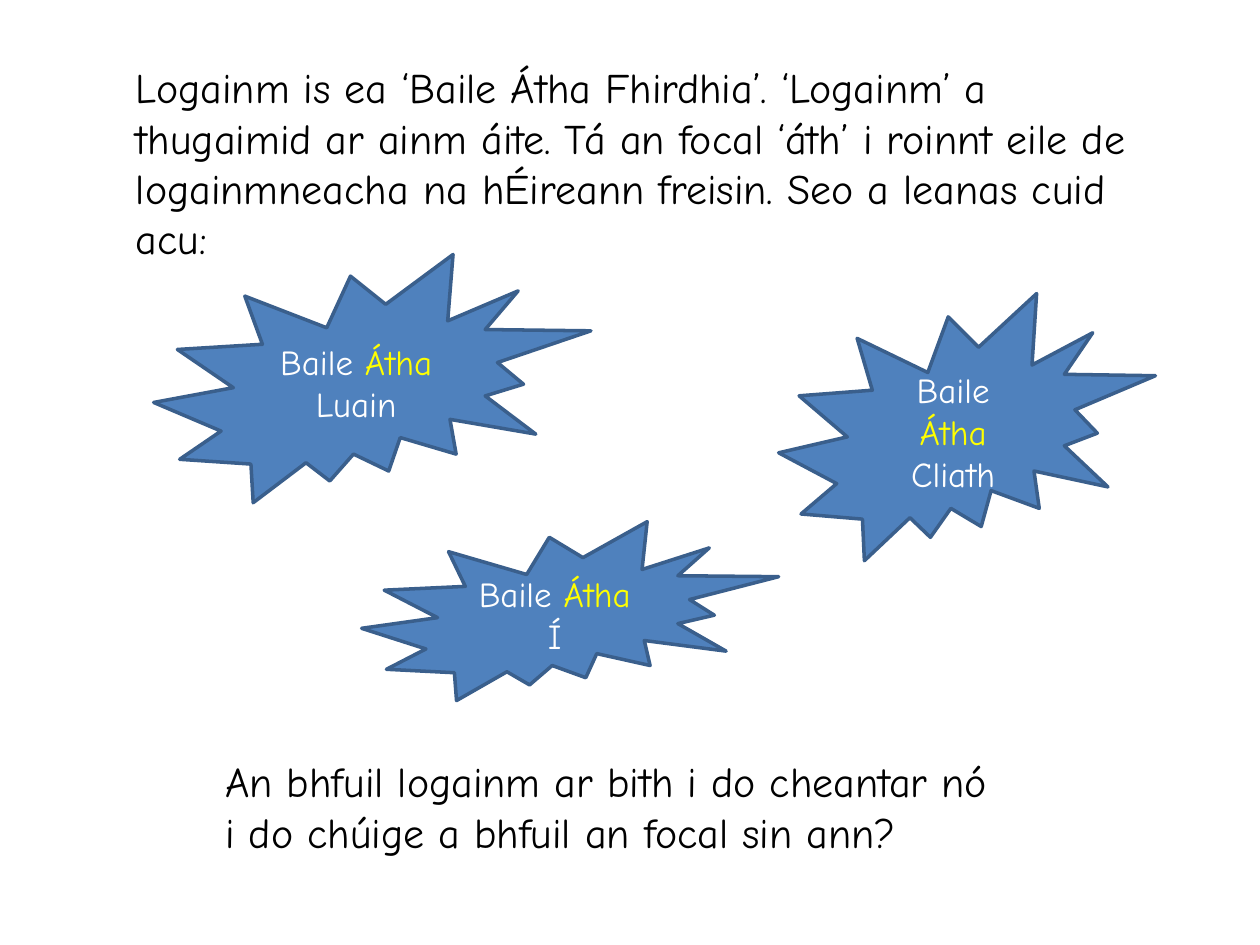
from pptx import Presentation, util as u
from pptx.dml.color import RGBColor
from pptx.enum import shapes, text

FONT = "Comic Neue"
BLACK = RGBColor(0x00, 0x00, 0x00)
WHITE = RGBColor(0xFF, 0xFF, 0xFF)
YELLOW = RGBColor(0xFF, 0xFF, 0x00)
BLUE = RGBColor(0x4F, 0x81, 0xBD)
DARK_BLUE = RGBColor(0x3A, 0x5F, 0x8C)

# Content: text and (left, top, width, height) in inches
PASSAGES = [
    ("Logainm is ea ‘Baile Átha Fhirdhia’. ‘Logainm’ a thugaimid ar ainm áite. "
     "Tá an focal ‘áth’ i roinnt eile de logainmneacha na hÉireann freisin. "
     "Seo a leanas cuid acu:", (0.98, 0.44, 8.27, 1.72)),
    ("An bhfuil logainm ar bith i do cheantar nó \v"
     "i do chúige a bhfuil an focal sin ann?", (1.69, 5.95, 7.09, 0.9)),
]
# Every place name is "Baile Átha" plus its own ending
PLACES = [
    ("Luain", (1.22, 2.02, 3.47, 1.97)),
    ("Cliath", (6.18, 2.33, 2.99, 2.12)),
    ("Í", (2.87, 4.14, 3.31, 1.42)),
]


def style(span, size, color):
    span.font.name = FONT
    span.font.size = u.Pt(size)
    span.font.color.rgb = color


def add_passage(slide, words, place):
    box = slide.shapes.add_textbox(*map(u.Inches, place))
    frame = box.text_frame
    frame.word_wrap = True
    frame.auto_size = text.MSO_AUTO_SIZE.SHAPE_TO_FIT_TEXT
    para = frame.paragraphs[0]
    para.text = words
    for span in para.runs:
        style(span, 24, BLACK)


def add_burst(slide, ending, place):
    burst = slide.shapes.add_shape(
        shapes.MSO_SHAPE.EXPLOSION2, *map(u.Inches, place))
    burst.shadow.inherit = False
    burst.fill.solid()
    burst.fill.fore_color.rgb = BLUE
    burst.line.color.rgb = DARK_BLUE
    burst.line.width = u.Pt(2)
    frame = burst.text_frame
    frame.word_wrap = True
    frame.vertical_anchor = text.MSO_ANCHOR.MIDDLE
    para = frame.paragraphs[0]
    para.alignment = text.PP_ALIGN.CENTER
    for words, color in (("Baile ", WHITE), ("Átha", YELLOW), (f" {ending}", WHITE)):
        span = para.add_run()
        span.text = words
        style(span, 20, color)


def main():
    deck = Presentation()
    deck.slide_width, deck.slide_height = u.Inches(10), u.Inches(7.5)
    page = deck.slides.add_slide(deck.slide_layouts[6])

    # Introduction, place-name bursts, closing question
    introduction, question = PASSAGES
    add_passage(page, *introduction)
    for ending, place in PLACES:
        add_burst(page, ending, place)
    add_passage(page, *question)

    deck.save("out.pptx")


if __name__ == "__main__":
    main()
